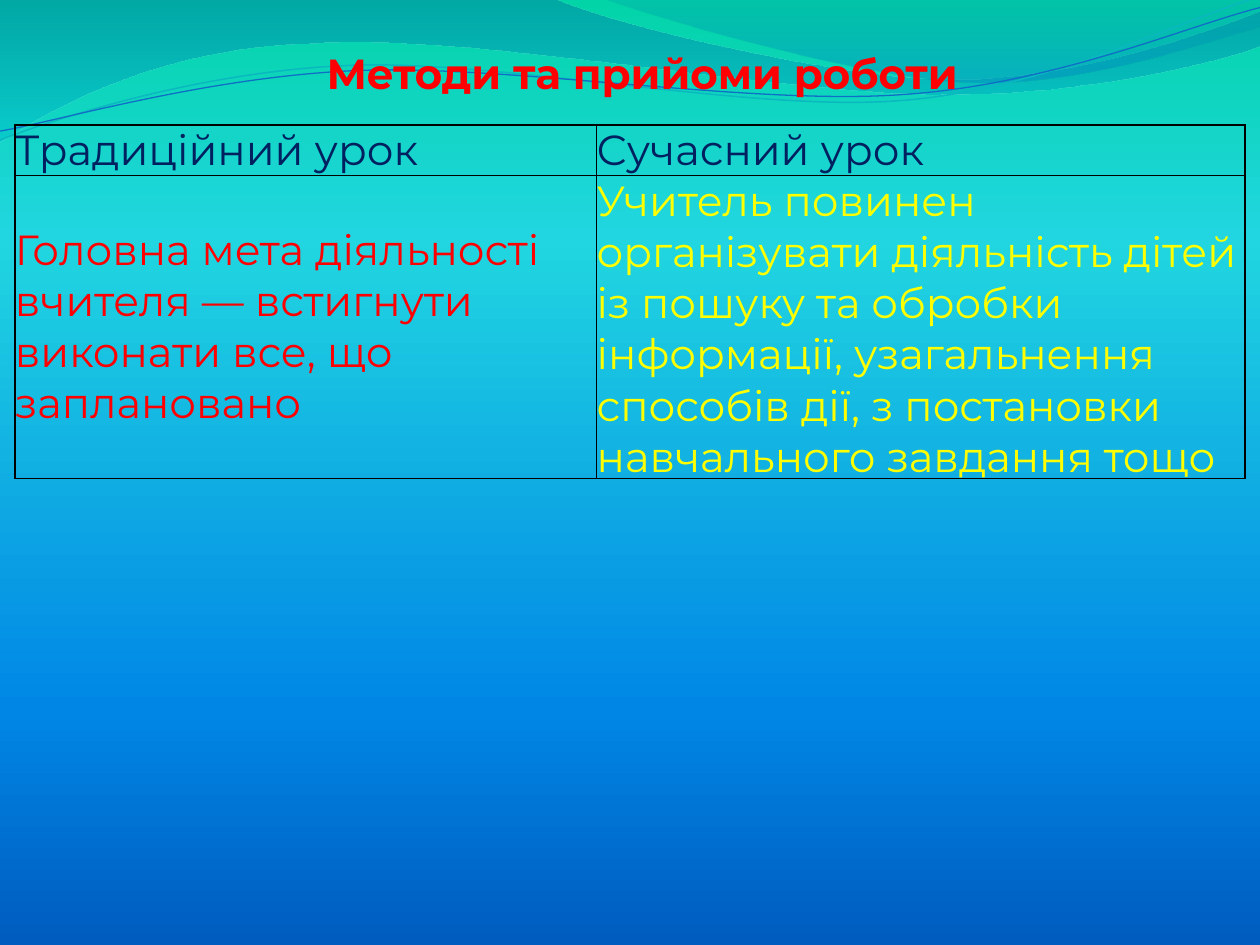
import pptx
import pptx.dml.color
import pptx.enum.text
import pptx.oxml
import pptx.oxml.ns
import pptx.util

Pt = pptx.util.Pt
RGB = pptx.dml.color.RGBColor
qn = pptx.oxml.ns.qn
make = pptx.oxml.ns.nsdecls

RED = RGB(0xFF, 0, 0)
NAVY = RGB(0, 0x20, 0x60)
YELLOW = RGB(0xFF, 0xFF, 0)
TEAL = RGB(0x0A, 0xB8, 0xBF)
BLUE = RGB(0x0F, 0x6F, 0xC6)
BLACK = RGB(0, 0, 0)
FONT = "Montserrat"

# Gradient stops: position in percent, colour, opacity in percent
SKY = [(0, RGB(0x03, 0xD4, 0xA8), 100), (25, RGB(0x21, 0xD6, 0xE0), 100),
       (75, RGB(0, 0x87, 0xE6), 100), (100, RGB(0, 0x5C, 0xBF), 100)]
DEEP = [(0, RGB(0, 0x74, 0xA1), 45), (100, RGB(0, 0xC6, 0xCF), 55)]
CREST = [(0, RGB(0, 0xA1, 0xA9), 30), (80, RGB(0, 0x8B, 0xBF), 45)]

# Each step is a line end (x, y) or a Bezier curve (two controls and an end)
BAND = [(0, 0), (316.8, -0.7),
        (342.7, 12.2, 478.1, 45.4, 545.8, 45.4),
        (614.2, 45.4, 689.8, 18.7, 720, 6.5), (720.7, 25.9),
        (707.8, 31.7, 626.4, 54.7, 537.1, 54),
        (447.8, 54, 275, 20.2, 185, 24.5),
        (92.9, 25.9, 33.1, 59.8, -0.7, 81.4), (0, 0)]
WEDGE = [(344.9, -0.7), (366.5, 7.9, 491, 44.6, 553.7, 46.8),
         (616.3, 49.7, 691.9, 23, 720, 15.1), (720, 0), (344.9, -0.7)]
UPPER = [(0, 79.9), (34.6, 67, 113.8, 41, 199.4, 37.4),
         (284.4, 33.8, 427, 64.1, 513.4, 57.6),
         (599.8, 51.1, 675.4, 10.8, 718.6, -1.4)]
LOWER = [(0, 74.9), (33.8, 69.1, 118.1, 43.9, 203.8, 40.3),
         (290.2, 36.7, 429.8, 60.5, 516.2, 54),
         (601.9, 48.2, 677.5, 15.1, 720, 4.3)]


def shade(fill, root, stops):
    """Give the fill found under root a top-to-bottom gradient."""
    fill.gradient()
    grad = root.find(".//" + qn("a:gradFill"))
    marks = "".join(
        f'<a:gs pos="{at * 1000}"><a:srgbClr val="{tint}">'
        f'<a:alpha val="{alpha * 1000}"/></a:srgbClr></a:gs>'
        for at, tint, alpha in stops)
    for child in list(grad):
        grad.remove(child)
    grad.append(pptx.oxml.parse_xml(f'<a:gsLst {make("a")}>{marks}</a:gsLst>'))
    grad.append(pptx.oxml.parse_xml(
        f'<a:lin {make("a")} ang="5400000" scaled="0"/>'))


def trace(steps, close):
    """Draw the steps as a freeform, in tenths of a point, with true curves."""
    dots = [(step[i] * 10, step[i + 1] * 10)
            for step in steps for i in range(0, len(step), 2)]
    pen = slide.shapes.build_freeform(*dots[0], scale=Pt(0.1))
    pen.add_line_segments(dots[1:], close=close)
    shape = pen.convert_to_shape()
    lines = iter(shape.element.findall(".//" + qn("a:lnTo")))
    for step in steps[1:]:
        first = next(lines)
        if len(step) == 6:
            curve = pptx.oxml.parse_xml(f'<a:cubicBezTo {make("a")}/>')
            first.addprevious(curve)
            for line in (first, next(lines), next(lines)):
                curve.append(line[0])
                line.getparent().remove(line)
    shape.shadow.inherit = False
    return shape


deck = pptx.Presentation()
deck.slide_width, deck.slide_height = Pt(720), Pt(540)
slide = deck.slides.add_slide(deck.slide_layouts[6])
shade(slide.background.fill, slide.element, SKY)

# Waves along the top
for steps, stops in ((BAND, DEEP), (WEDGE, CREST)):
    wave = trace(steps, True)
    wave.line.fill.background()
    shade(wave.fill, wave.element, stops)
for steps, tint, width in ((UPPER, TEAL, 0.85), (LOWER, BLUE, 0.75)):
    wave = trace(steps, False)
    wave.fill.background()
    wave.line.color.rgb = tint
    wave.line.width = Pt(width)

# Title
title = slide.shapes.add_textbox(Pt(175.7), Pt(9.4), Pt(382.3), Pt(46))
frame = title.text_frame
frame.word_wrap = False
frame.auto_size = pptx.enum.text.MSO_AUTO_SIZE.SHAPE_TO_FIT_TEXT
frame.text = "Методи та прийоми роботи"
para = frame.paragraphs[0]
para.alignment = pptx.enum.text.PP_ALIGN.CENTER
para.line_spacing = 1.5
font = para.runs[0].font
font.name, font.size, font.bold = FONT, Pt(24), True
font.color.rgb = RED

# Comparison of lessons
ROWS = [
    [("Традиційний урок", NAVY), ("Сучасний урок", NAVY)],
    [("Головна мета діяльності вчителя — встигнути виконати все, "
      "що заплановано", RED),
     ("Учитель повинен організувати діяльність дітей із пошуку та обробки "
      "інформації, узагальнення способів дії, з постановки навчального "
      "завдання тощо", YELLOW)],
]
table = slide.shapes.add_table(
    2, 2, Pt(8.5), Pt(71.3), Pt(703), Pt(202)).table
table.first_row = table.horz_banding = False
for col, width in zip(table.columns, (332.5, 370.5)):
    col.width = Pt(width)
for row, height in zip(table.rows, (29, 173)):
    row.height = Pt(height)
for row, texts in zip(table.rows, ROWS):
    for cell, (text, tint) in zip(row.cells, texts):
        cell.text_frame.text = text
        font = cell.text_frame.paragraphs[0].runs[0].font
        font.name, font.size = FONT, Pt(24)
        font.color.rgb = tint
        cell.vertical_anchor = pptx.enum.text.MSO_ANCHOR.MIDDLE
        cell.margin_left = cell.margin_right = Pt(0)
        cell.margin_top = cell.margin_bottom = Pt(0)
        cell.fill.background()
        props = cell._tc.get_or_add_tcPr()
        for i, side in enumerate("LRTB"):
            props.insert(i, pptx.oxml.parse_xml(
                f'<a:ln{side} {make("a")} w="{Pt(1)}"><a:solidFill>'
                f'<a:srgbClr val="{BLACK}"/></a:solidFill></a:ln{side}>'))

deck.save("out.pptx")
